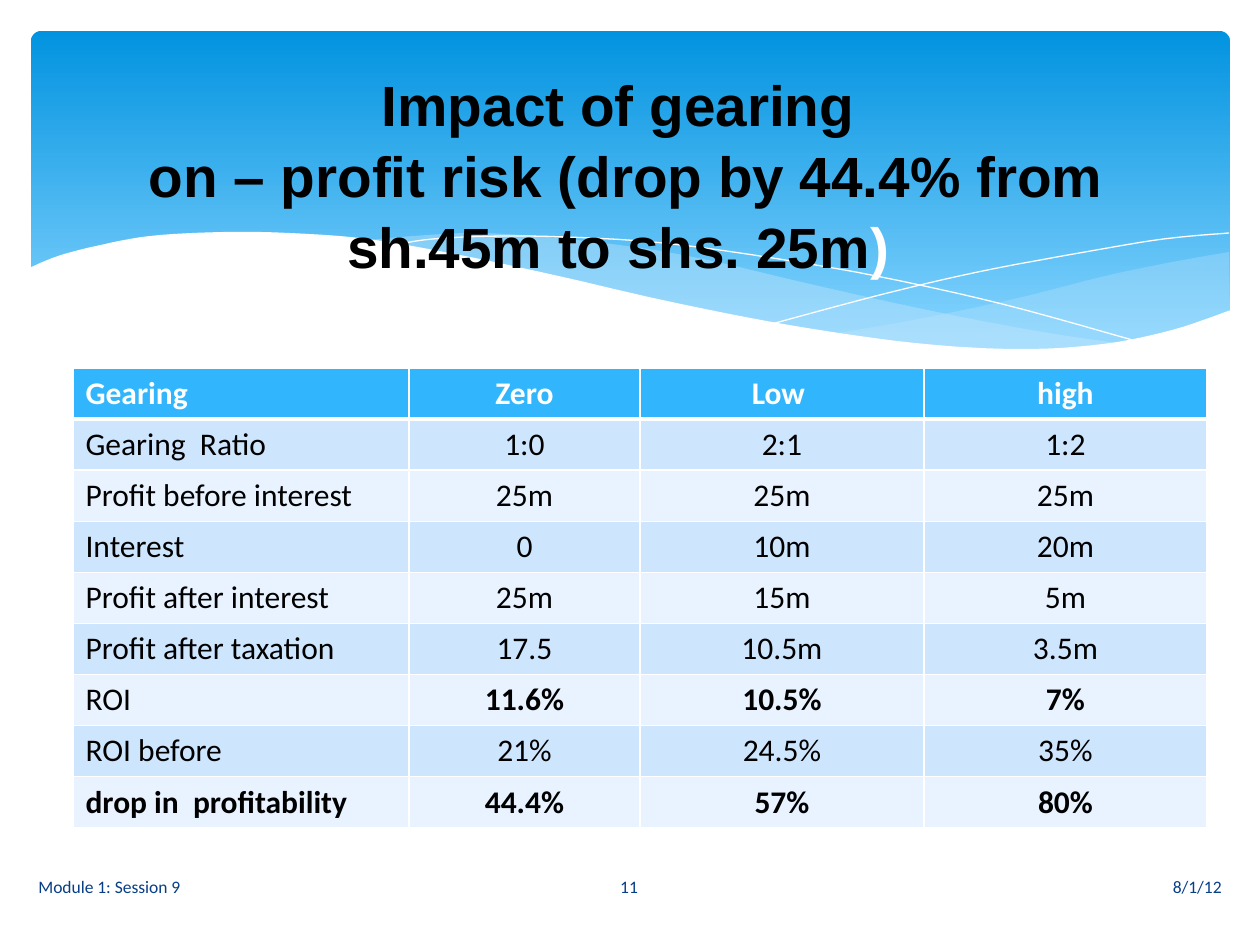
import pptx
import pptx.util
import pptx.dml.color
import pptx.enum.shapes
import pptx.enum.text
import pptx.oxml
from lxml import etree
from pptx.oxml.ns import qn

SCALE = 914400 / 126  # EMU in one px
FINE = 10             # curve points are kept to a tenth of a px
ALIGN = pptx.enum.text.PP_ALIGN
MIDDLE = pptx.enum.text.MSO_ANCHOR.MIDDLE

WHITE, BLACK, NAVY = "FFFFFF", "000000", "073E87"
HEAD, BANDS = "31B6FD", ("CEE5FE", "E8F3FF")
PALE = "C6E7FC"

# Knots of the wave curves, in px
RIGHT = [
    [(1229, 252), (1178, 261), (1123, 272), (1085, 281), (1014, 299),
     (919, 319), (833, 334)],
    [(833, 334), (888, 341), (954, 348), (1026, 350), (1087, 347),
     (1140, 339), (1187, 326), (1230, 311)],
]
MID = [
    [(1125, 344), (1055, 334), (977, 320), (890, 302), (793, 280), (717, 262),
     (648, 249), (557, 238), (479, 233), (413, 236), (360, 241)],
    [(360, 241), (431, 251), (509, 266), (566, 280), (668, 302), (757, 321),
     (838, 335), (927, 347), (1003, 350), (1068, 349), (1125, 344)],
]
FALL = [[(389, 246), (433, 239), (505, 236), (591, 238), (672, 244),
         (766, 257), (876, 276), (1002, 304), (1143, 343)]]
RISE = [[(772, 324), (876, 296), (978, 272), (1091, 251), (1164, 239),
         (1229, 233)]]
FRONT = [
    [(1231, 310), (1172, 330), (1103, 344), (1019, 349), (915, 343),
     (789, 325), (667, 301), (563, 277), (460, 255), (368, 239), (290, 233),
     (223, 232), (150, 236), (96, 246), (58, 256), (29, 268)],
    [(29, 415), (1231, 415)],
]

COLS = (336, 231, 284, 283)
ROW = 51
ROWS = [
    ("Gearing", "Zero", "Low ", "high"),
    ("Gearing  Ratio", "1:0", "2:1", "1:2"),
    ("Profit before interest", "25m", "25m", "25m"),
    ("Interest", "0", "10m", "20m"),
    ("Profit after interest", "25m", "15m", "5m"),
    ("Profit after taxation", "17.5", "10.5m", "3.5m"),
    ("ROI", "11.6%", "10.5%", "7%"),
    ("ROI before", "21%", "24.5%", "35%"),
    ("drop in  profitability", "44.4%", "57%", "80%"),
]
ROI, DROP = 6, 8  # rows with bold figures


def px(*nums):
    return [pptx.util.Emu(round(n * SCALE)) for n in nums]


def paint(color, code):
    color.rgb = pptx.dml.color.RGBColor.from_string(code)


def style(font, code, fmt):
    for key, val in fmt.items():
        setattr(font, key, val)
    paint(font.color, code)


def smooth(knots, steps=6):
    """Points of a Catmull-Rom curve through the knots."""
    if len(knots) < 3:
        return knots
    ends = [knots[0], *knots, knots[-1]]
    out = [knots[0]]
    for a, b, c, d in zip(ends, ends[1:], ends[2:], ends[3:]):
        for i in range(1, steps + 1):
            t = i / steps
            out.append(tuple(
                (2 * q + (r - p) * t + (2 * p - 5 * q + 4 * r - s) * t ** 2
                 + (3 * q - p - 3 * r + s) * t ** 3) / 2
                for p, q, r, s in zip(a, b, c, d)))
    return out


def wave(slide, curves, fill=None, alpha=None):
    """A filled wave, or a white hairline when there is no fill."""
    pts = [(round(x * FINE), round(y * FINE))
           for knots in curves for x, y in smooth(knots)]
    pen = slide.shapes.build_freeform(*pts[0], scale=SCALE / FINE)
    pen.add_line_segments(pts[1:], close=fill is not None)
    shape = pen.convert_to_shape()
    shape.shadow.inherit = False
    if fill is None:
        shape.fill.background()
        paint(shape.line.color, WHITE)
        shape.line.width = pptx.util.Pt(0)
        return
    shape.line.fill.background()
    shape.fill.solid()
    paint(shape.fill.fore_color, fill)
    if alpha:
        clr = shape._element.spPr.find(".//" + qn("a:srgbClr"))
        etree.SubElement(clr, qn("a:alpha"), val=str(alpha * 1000))


def banner(slide):
    kind = pptx.enum.shapes.MSO_SHAPE.ROUNDED_RECTANGLE
    shape = slide.shapes.add_shape(kind, *px(31, 31, 1199, 340))
    shape.adjustments[0] = 0.03
    shape.shadow.inherit = False
    shape.line.fill.background()
    shape.fill.gradient()
    shape.fill.gradient_angle = 270
    stops = ((0, "0293E0"), (0.9, "83D3FE"))
    for stop, (pos, code) in zip(shape.fill.gradient_stops, stops):
        stop.position = pos
        paint(stop.color, code)


def border(cell, side, width):
    line = etree.SubElement(cell._tc.get_or_add_tcPr(), qn("a:ln" + side),
                            w=str(pptx.util.Pt(width)))
    fill = etree.SubElement(line, qn("a:solidFill"))
    etree.SubElement(fill, qn("a:srgbClr"), val=WHITE)


def grid(slide):
    frame = slide.shapes.add_table(len(ROWS), len(COLS),
                                   *px(73, 368, sum(COLS), ROW * len(ROWS)))
    table = frame.table
    for col, wide in zip(table.columns, COLS):
        col.width = px(wide)[0]
    for r, texts in enumerate(ROWS):
        table.rows[r].height = px(ROW)[0]
        for c, text in enumerate(texts):
            cell = table.cell(r, c)
            for side in "LRTB":
                thick = (r, side) in ((0, "B"), (1, "T"))
                border(cell, side, 3 if thick else 1)
            cell.fill.solid()
            paint(cell.fill.fore_color, BANDS[(r - 1) % 2] if r else HEAD)
            cell.text = text
            par = cell.text_frame.paragraphs[0]
            par.alignment = ALIGN.CENTER if c else ALIGN.LEFT
            bold = r in (0, DROP) or (r == ROI and c > 0)
            style(par.runs[0].font, BLACK if r else WHITE,
                  {"name": "Calibri", "size": pptx.util.Pt(18), "bold": bold})


def note(slide, text, left, wide, align):
    box = slide.shapes.add_textbox(*px(left, 862, wide, 50))
    frame = box.text_frame
    frame.word_wrap = True
    frame.vertical_anchor = MIDDLE
    par = frame.paragraphs[0]
    par.alignment = align
    run = par.add_run()
    run.text = text
    style(run.font, NAVY, {"name": "Calibri", "size": pptx.util.Pt(10)})


def title(slide):
    box = slide.shapes.title
    box.left, box.top, box.width, box.height = px(59, 98, 1134, 151)
    box._element.getparent().append(box._element)  # in front of the waves
    frame = box.text_frame
    frame.auto_size = pptx.enum.text.MSO_AUTO_SIZE.NONE
    frame.word_wrap = True
    frame.vertical_anchor = MIDDLE
    par = frame.paragraphs[0]
    par.alignment = ALIGN.CENTER
    par.line_spacing = 1.04
    parts = (("Impact of gearing ", BLACK),
             ("on – profit risk (drop by 44.4% from sh.45m to shs. 25m", BLACK),
             (") ", WHITE))
    for i, (text, code) in enumerate(parts):
        if i == 1:
            par.add_line_break()
        run = par.add_run()
        run.text = text
        style(run.font, code, {"name": "Arial", "bold": True,
                               "size": pptx.util.Pt(32.4)})


def main():
    deck = pptx.Presentation()
    deck.slide_width, deck.slide_height = px(1260, 945)
    slide = deck.slides.add_slide(deck.slide_layouts[5])

    # Banner and waves
    banner(slide)
    wave(slide, RIGHT, PALE, 29)
    wave(slide, MID, PALE, 40)
    wave(slide, FALL)
    wave(slide, RISE)
    wave(slide, FRONT, WHITE)

    # Table, footer and title
    grid(slide)
    note(slide, "8/1/12", 712, 522, ALIGN.RIGHT)
    note(slide, "Module 1: Session 9", 26, 522, ALIGN.LEFT)
    note(slide, "11", 549, 160, ALIGN.CENTER)
    title(slide)
    deck.save("out.pptx")


if __name__ == "__main__":
    main()
